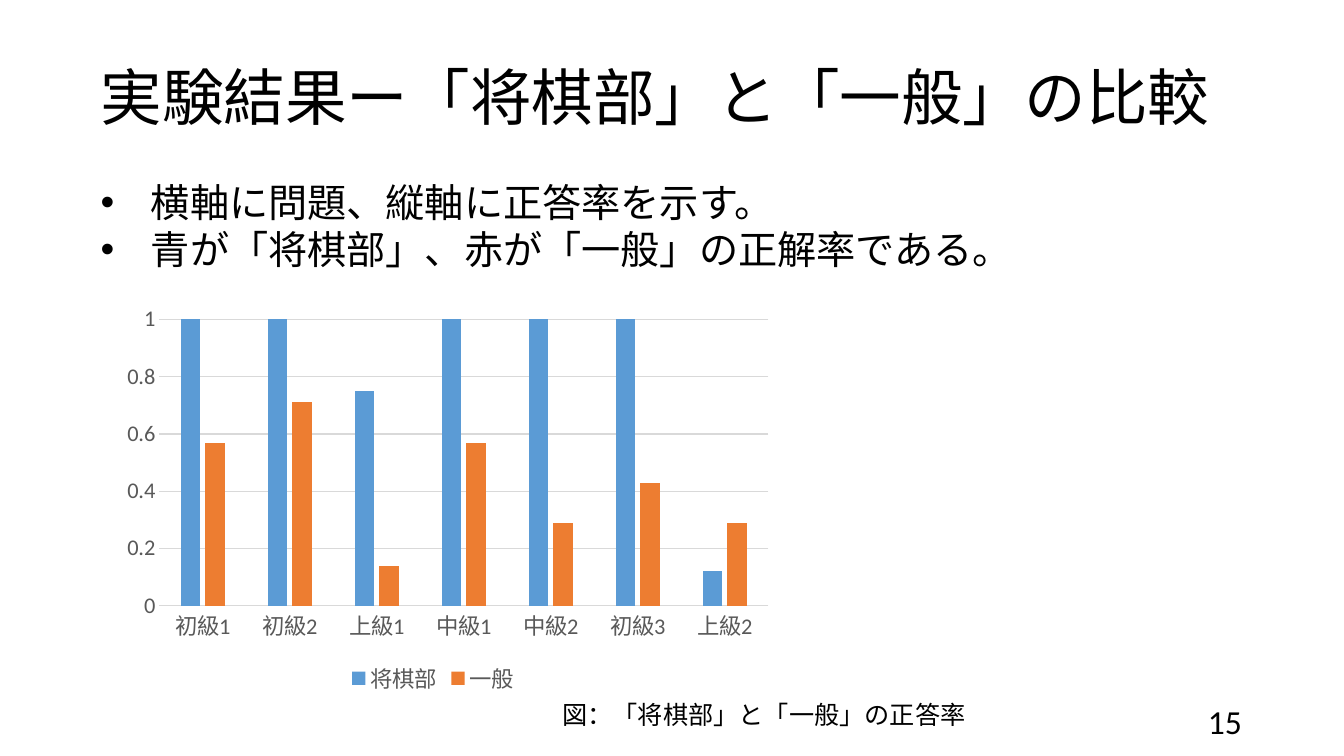
"""Build the slide comparing correct-answer rates of the shogi club and the general group."""
import pptx
import pptx.chart.data
import pptx.dml.color
import pptx.enum.chart
import pptx.enum.text
import pptx.oxml
import pptx.oxml.ns
import pptx.util

Pt = pptx.util.Pt
RGB = pptx.dml.color.RGBColor.from_string
qn = pptx.oxml.ns.qn
ALIGN = pptx.enum.text.PP_ALIGN
ANCHOR = pptx.enum.text.MSO_ANCHOR
AUTO = pptx.enum.text.MSO_AUTO_SIZE
XL = pptx.enum.chart
FONT = "Calibri"
COLORS = {"text": "000000", "label": "595959", "grid": "D9D9D9",
          "club": "5B9BD5", "general": "ED7D31"}

prs = pptx.Presentation()
prs.slide_width, prs.slide_height = Pt(960), Pt(540)
s = prs.slides.add_slide(prs.slide_layouts[6])


def add_text(lines, box, size, anchor=ANCHOR.TOP, align=ALIGN.LEFT,
             spacing=None, bullet=False, grow=False):
    sp = s.shapes.add_textbox(*[Pt(v) for v in box])
    tf = sp.text_frame
    tf.word_wrap = True
    tf.vertical_anchor = anchor
    tf.auto_size = AUTO.SHAPE_TO_FIT_TEXT if grow else AUTO.NONE
    for i, line in enumerate(lines):
        p = tf.add_paragraph() if i else tf.paragraphs[0]
        p.alignment = align
        if spacing:
            p.line_spacing = spacing
        if bullet:
            pPr = p._p.get_or_add_pPr()
            pPr.set("marL", str(Pt(36)))
            pPr.set("indent", str(Pt(-36)))
            for tag, key, value in (("a:buFont", "typeface", "Arial"), ("a:buChar", "char", "•")):
                el = pptx.oxml.parse_xml(f"<{tag} {pptx.oxml.ns.nsdecls('a')}/>")
                el.set(key, value)
                pPr.append(el)
        r = p.add_run()
        r.text = line
        r.font.size, r.font.name = Pt(size), FONT
        r.font.color.rgb = RGB(COLORS["text"])


add_text(["実験結果ー「将棋部」と「一般」の比較"], (64.8, 19.44, 828, 104.4), 44,
         anchor=ANCHOR.MIDDLE, spacing=0.9)
add_text(["横軸に問題、縦軸に正答率を示す。", "青が「将棋部」、赤が「一般」の正解率である。"],
         (64.8, 123.84, 828, 74.88), 28, bullet=True, grow=True)
add_text(["図：「将棋部」と「一般」の正答率"], (394.56, 496.08, 317.52, 28.8), 18, grow=True)
add_text(["15"], (678.24, 500.4, 216, 28.8), 24, anchor=ANCHOR.MIDDLE, align=ALIGN.RIGHT)

data = pptx.chart.data.CategoryChartData()
data.categories = ["初級1", "初級2", "上級1", "中級1", "中級2", "初級3", "上級2"]
data.add_series("将棋部", [1, 1, 0.75, 1, 1, 1, 0.12])
data.add_series("一般", [0.57, 0.71, 0.14, 0.57, 0.29, 0.43, 0.29])
chart = s.shapes.add_chart(XL.XL_CHART_TYPE.COLUMN_CLUSTERED, Pt(64.8), Pt(210.96),
                           Pt(488.88), Pt(288), data).chart
chart.has_title = False
chart.has_legend = True
chart.legend.position = XL.XL_LEGEND_POSITION.BOTTOM
chart.legend.include_in_layout = False

cat, val = chart.category_axis, chart.value_axis
val.minimum_scale, val.maximum_scale, val.major_unit = 0, 1, 0.2
val.has_major_gridlines = True
val.tick_labels.number_format = "General"
val.tick_labels.number_format_is_linked = False
val.format.line.fill.background()
for line in (cat.format.line, val.major_gridlines.format.line):
    line.color.rgb = RGB(COLORS["grid"])
    line.width = Pt(0.75)
for axis in (cat, val):
    axis.major_tick_mark = axis.minor_tick_mark = XL.XL_TICK_MARK.NONE
for font in (chart.font, cat.tick_labels.font, val.tick_labels.font, chart.legend.font):
    font.size, font.name = Pt(16), FONT
    font.color.rgb = RGB(COLORS["label"])

plot = chart.plots[0]
plot.gap_width, plot.overlap, plot.vary_by_categories = 219, -27, False
for series, name in zip(plot.series, ("club", "general")):
    series.format.fill.solid()
    series.format.fill.fore_color.rgb = RGB(COLORS[name])
    series.invert_if_negative = False

area = chart._chartSpace.find(".//" + qn("c:plotArea"))
for old in area.findall(qn("c:layout")):
    area.remove(old)
places = [("layoutTarget", "inner"), ("xMode", "edge"), ("yMode", "edge"),
          ("x", 0.1), ("y", 0.06), ("w", 0.89), ("h", 0.71)]
items = "".join(f'<c:{tag} val="{value}"/>' for tag, value in places)
area.insert(0, pptx.oxml.parse_xml(
    f"<c:layout {pptx.oxml.ns.nsdecls('c')}><c:manualLayout>{items}</c:manualLayout></c:layout>"))

prs.save("out.pptx")
